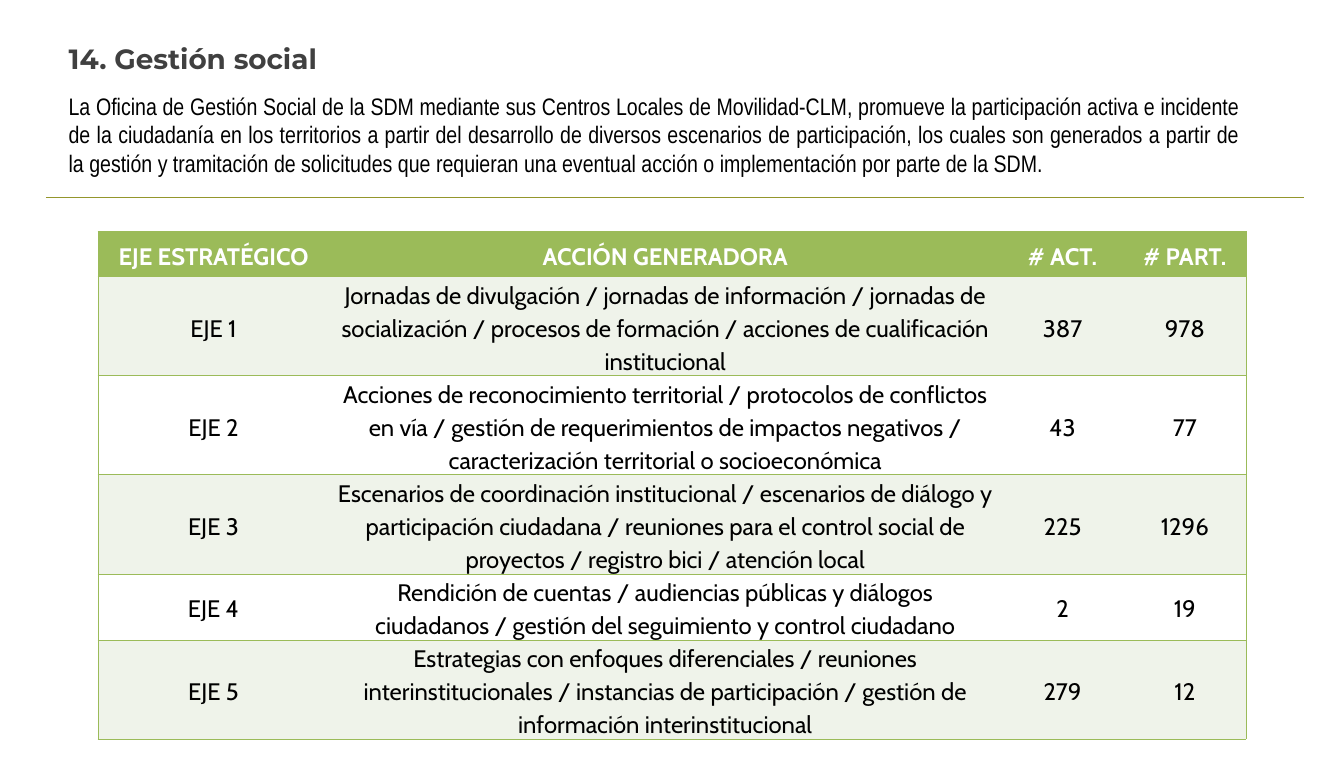
"""Build the social management slide: title, introduction and table of strategic axes."""
from typing import NamedTuple

from lxml.etree import SubElement
from pptx import Presentation
from pptx.dml.color import RGBColor
from pptx.enum.shapes import MSO_CONNECTOR
from pptx.enum.text import MSO_ANCHOR, MSO_AUTO_SIZE, PP_ALIGN
from pptx.oxml.ns import qn
from pptx.util import Inches, Pt

BLACK = RGBColor(0x00, 0x00, 0x00)
WHITE = RGBColor(0xFF, 0xFF, 0xFF)
TITLE_GRAY = RGBColor(0x40, 0x40, 0x40)
RULE_OLIVE = RGBColor(0x94, 0x96, 0x2C)
GREEN = RGBColor(0x9B, 0xBB, 0x59)
PALE_GREEN = RGBColor(0xEF, 0xF3, 0xEA)

SLIDE_WIDTH = Inches(18.79)
SLIDE_HEIGHT = Inches(10.61)
MARGIN = 4.58
COLUMN_SHARES = (17.19, 50.03, 9.1, 9.1)
HEADER_SHARE = 5.94
LINE_SHARE = 4.35
HEADINGS = ("EJE ESTRATÉGICO", "ACCIÓN GENERADORA", "# ACT.", "# PART.")
INTRODUCTION = (
    "La Oficina de Gestión Social de la SDM mediante sus Centros Locales de Movilidad-CLM, "
    "promueve la participación activa e incidente de la ciudadanía en los territorios a partir "
    "del desarrollo de diversos escenarios de participación, los cuales son generados a partir "
    "de la gestión y tramitación de solicitudes que requieran una eventual acción o "
    "implementación por parte de la SDM."
)


class Axis(NamedTuple):
    """One strategic axis, with the number of text lines its action takes."""
    action: str
    activities: int
    participants: int
    lines: int = 3


AXES = (
    Axis("Jornadas de divulgación / jornadas de información / jornadas de socialización / "
         "procesos de formación / acciones de cualificación institucional", 387, 978),
    Axis("Acciones de reconocimiento territorial / protocolos de conflictos en vía / gestión de "
         "requerimientos de impactos negativos / caracterización territorial o socioeconómica",
         43, 77),
    Axis("Escenarios de coordinación institucional / escenarios de diálogo y participación "
         "ciudadana / reuniones para el control social de proyectos / registro bici / "
         "atención local", 225, 1296),
    Axis("Rendición de cuentas / audiencias públicas y diálogos ciudadanos / gestión del "
         "seguimiento y control ciudadano", 2, 19, lines=2),
    Axis("Estrategias con enfoques diferenciales / reuniones interinstitucionales / instancias "
         "de participación / gestión de información interinstitucional", 279, 12),
)


def across(percent: float) -> int:
    """Return a percentage of the slide's width."""
    return round(SLIDE_WIDTH * percent / 100)


def down(percent: float) -> int:
    """Return a percentage of the slide's height."""
    return round(SLIDE_HEIGHT * percent / 100)


def write_text(frame, text: str, *, font: str, size: float = 24, color: RGBColor = BLACK,
               bold: bool = False, align=PP_ALIGN.LEFT, line_spacing: float = 1.0,
               space_after: float = 0) -> None:
    """Write one formatted paragraph into a text frame."""
    frame.word_wrap = True
    paragraph = frame.paragraphs[0]
    paragraph.alignment = align
    paragraph.line_spacing = line_spacing
    paragraph.space_before = Pt(0)
    paragraph.space_after = Pt(space_after)
    run = paragraph.add_run()
    run.text = text
    run.font.name = font
    run.font.size = Pt(size)
    run.font.bold = bold
    run.font.color.rgb = color


def add_heading(slide) -> None:
    """Place the title, the introduction and the rule below them."""
    title = slide.shapes.title
    title.left, title.top = across(MARGIN), down(5)
    title.width, title.height = across(66.37), down(5.37)
    title.text_frame.vertical_anchor = MSO_ANCHOR.TOP
    write_text(title.text_frame, "14. Gestión social", font="Montserrat", size=28,
               color=TITLE_GRAY, bold=True)
    introduction = slide.shapes.add_textbox(across(MARGIN), down(11.59), across(88.13), down(12.35))
    write_text(introduction.text_frame, INTRODUCTION, font="Arial Narrow", align=PP_ALIGN.JUSTIFY)
    for shape in (title, introduction):
        shape.text_frame.auto_size = MSO_AUTO_SIZE.SHAPE_TO_FIT_TEXT

    rule = slide.shapes.add_connector(MSO_CONNECTOR.STRAIGHT, across(3.41), down(26.01),
                                      across(97.02), down(26.01))
    rule.line.color.rgb = RULE_OLIVE
    rule.line.width = Pt(0.75)
    SubElement(rule._element.spPr, qn("a:effectLst"))


def set_borders(cell, sides: str) -> None:
    """Draw green borders on the given sides of a cell and clear the others."""
    properties = cell._tc.get_or_add_tcPr()
    for side in "LRTB":
        line = SubElement(properties, qn(f"a:ln{side}"), w=str(Pt(1)))
        if side in sides:
            fill = SubElement(line, qn("a:solidFill"))
            SubElement(fill, qn("a:srgbClr"), val=str(GREEN))
        else:
            SubElement(line, qn("a:noFill"))


def add_axes_table(slide) -> None:
    """Add the table of strategic axes under its green header."""
    rows = [HEADINGS] + [
        (f"EJE {number}", axis.action, str(axis.activities), str(axis.participants))
        for number, axis in enumerate(AXES, start=1)
    ]
    row_shares = [HEADER_SHARE] + [axis.lines * LINE_SHARE for axis in AXES]
    table = slide.shapes.add_table(len(rows), len(HEADINGS), across(7.29), down(30.54),
                                   across(sum(COLUMN_SHARES)), down(sum(row_shares))).table
    table.horz_banding = False
    for column, share in zip(table.columns, COLUMN_SHARES):
        column.width = across(share)
    for row, share in zip(table.rows, row_shares):
        row.height = down(share)

    last_column = len(HEADINGS) - 1
    for row_index, texts in enumerate(rows):
        is_header = row_index == 0
        background = GREEN if is_header else PALE_GREEN if row_index % 2 else WHITE
        for column_index, text in enumerate(texts):
            cell = table.cell(row_index, column_index)
            set_borders(cell, "TB" + {0: "L", last_column: "R"}.get(column_index, ""))
            cell.fill.solid()
            cell.fill.fore_color.rgb = background
            cell.vertical_anchor = MSO_ANCHOR.MIDDLE
            cell.margin_left = cell.margin_right = Inches(0.07)
            cell.margin_top = cell.margin_bottom = 0
            write_text(cell.text_frame, text, font="Cabin", bold=is_header,
                       color=WHITE if is_header else BLACK, align=PP_ALIGN.CENTER,
                       line_spacing=1.15, space_after=10)


def main() -> None:
    """Build and save the presentation."""
    presentation = Presentation()
    presentation.slide_width = SLIDE_WIDTH
    presentation.slide_height = SLIDE_HEIGHT
    slide = presentation.slides.add_slide(presentation.slide_layouts[5])
    add_heading(slide)
    add_axes_table(slide)
    presentation.save("out.pptx")


if __name__ == "__main__":
    main()
